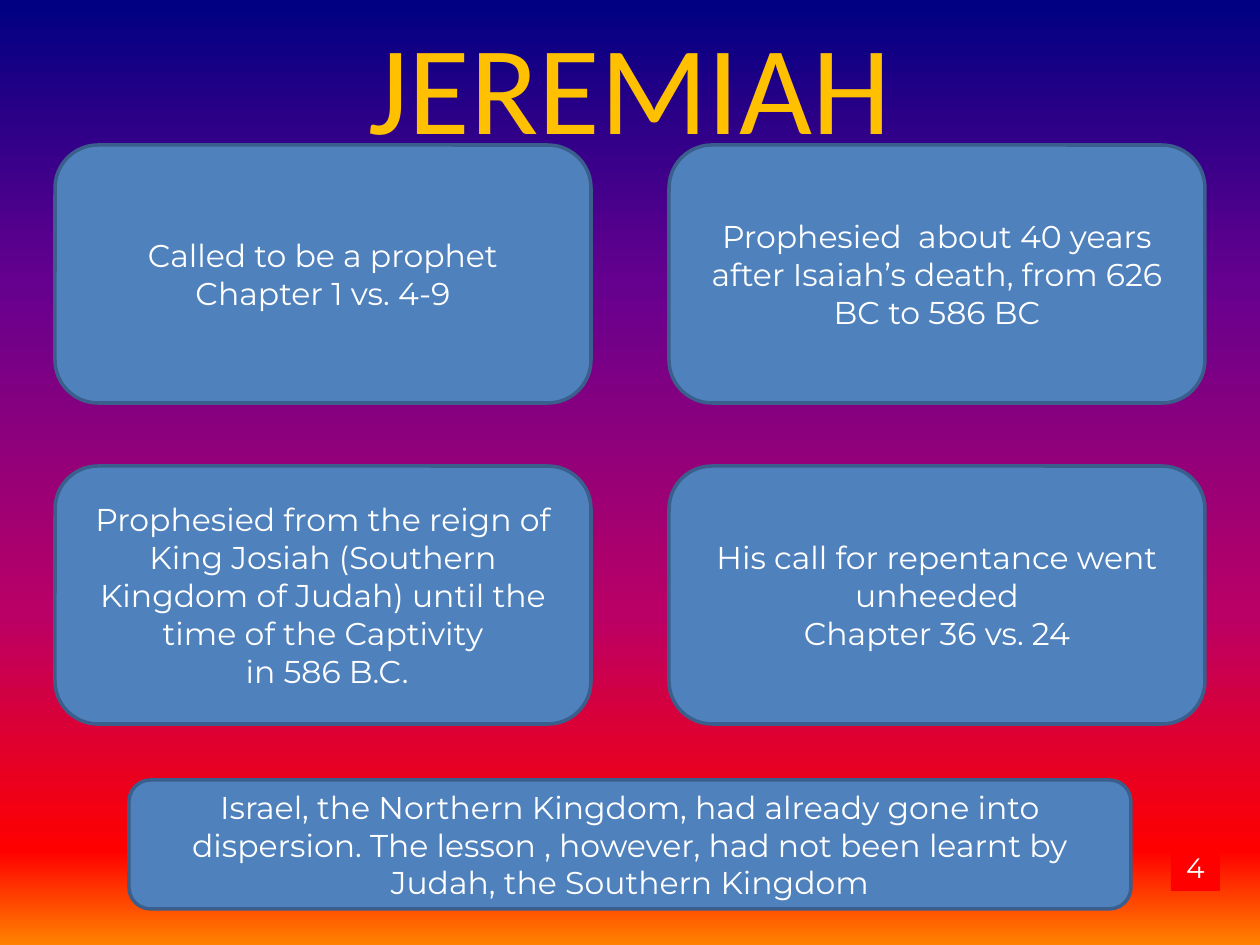
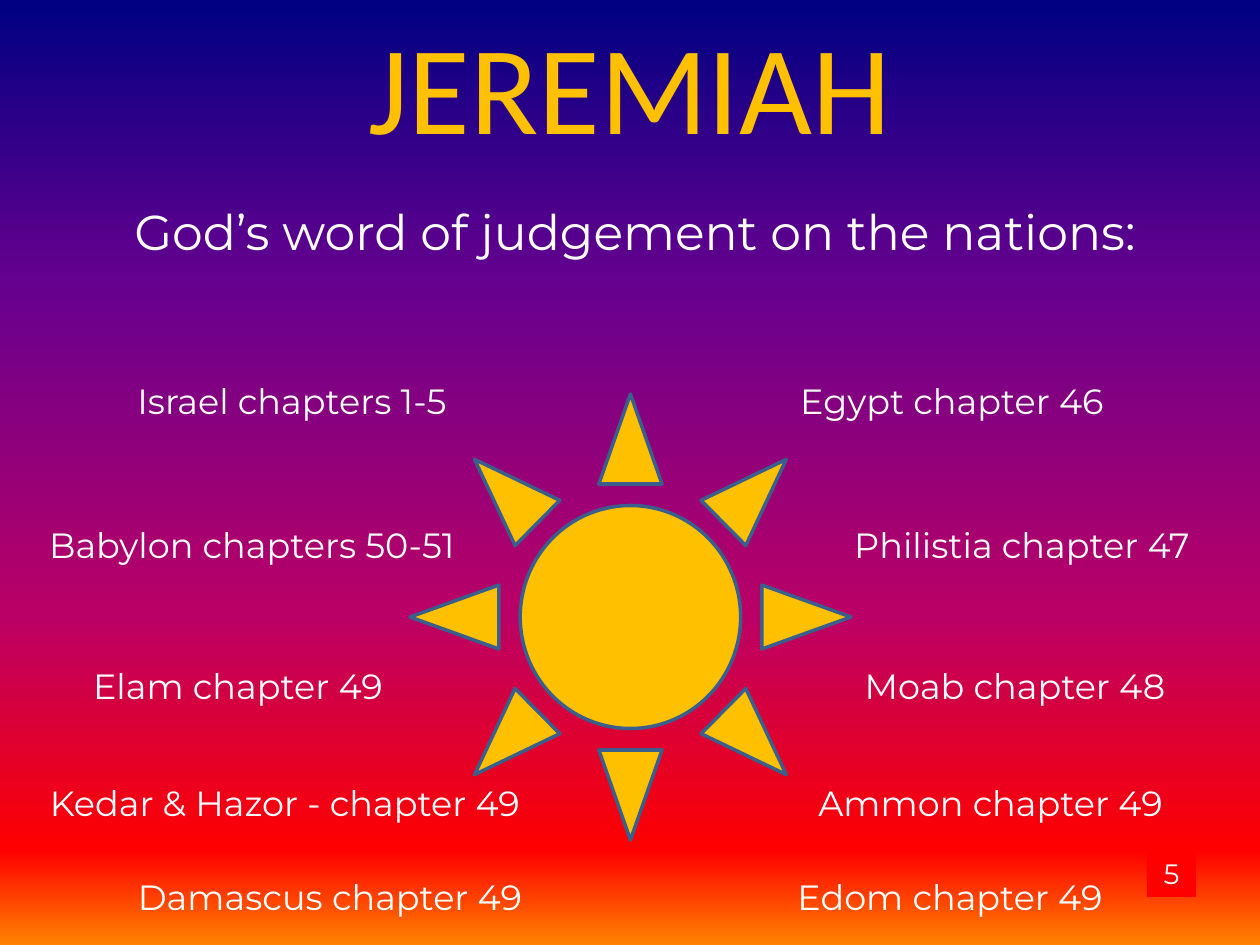
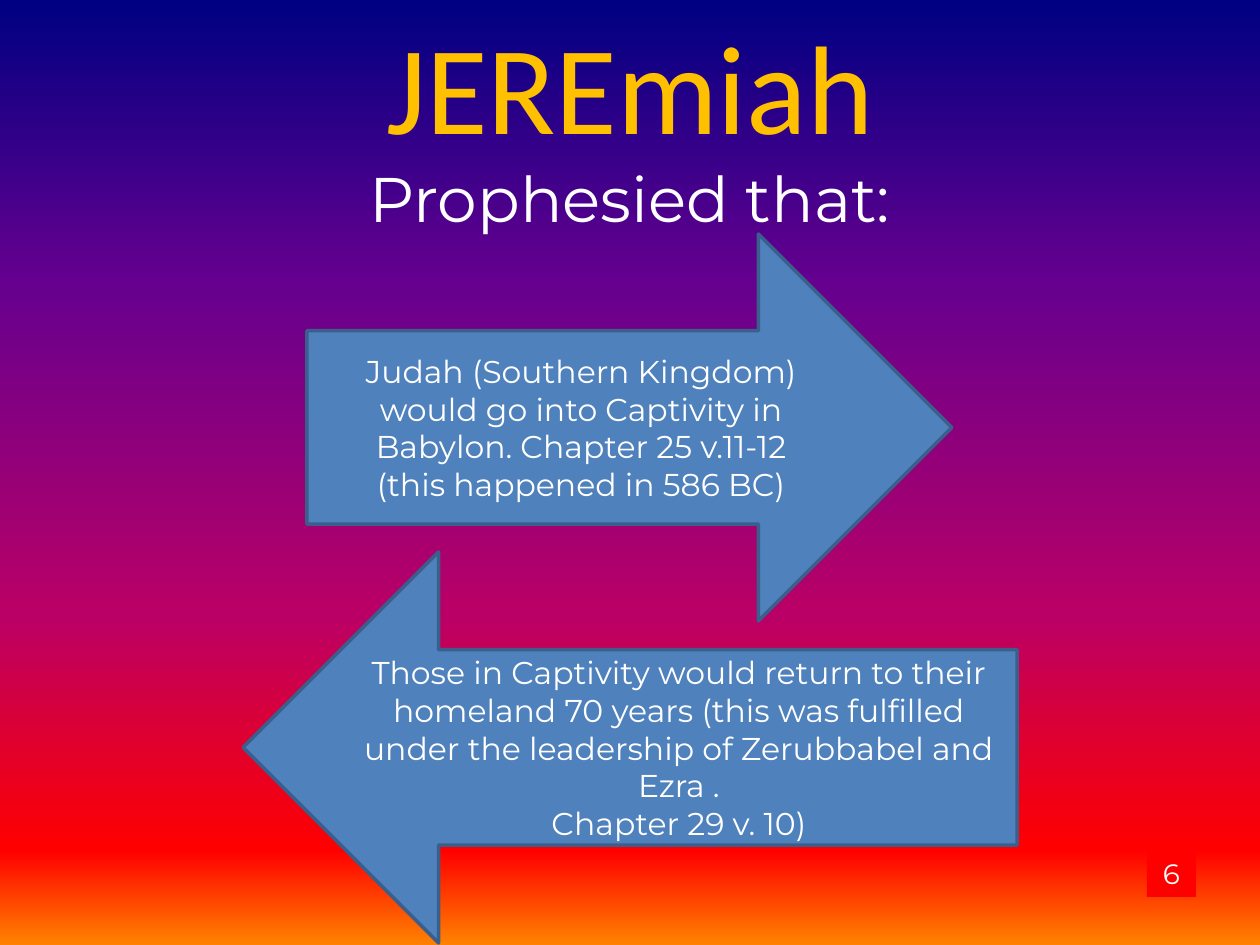
"""Build three slides about the prophet Jeremiah."""
from lxml import etree
from pptx import Presentation
from pptx.dml.color import RGBColor
from pptx.enum.shapes import MSO_SHAPE
from pptx.enum.text import MSO_ANCHOR, MSO_AUTO_SIZE, PP_ALIGN
from pptx.oxml.ns import qn
from pptx.util import Pt

EMU_PER_PX = 914400 / 126
SLIDE_WIDTH, SLIDE_HEIGHT = 1260, 945
TITLE_ONLY = 5

GOLD = RGBColor(0xFF, 0xC0, 0x00)
WHITE = RGBColor(0xFF, 0xFF, 0xFF)
BLUE = RGBColor(0x4F, 0x81, 0xBD)
OUTLINE = RGBColor(0x3A, 0x5F, 0x8C)
RED = RGBColor(0xFF, 0x00, 0x00)
SUNSET = [
    (0, RGBColor(0x00, 0x00, 0x82)),
    (30, RGBColor(0x66, 0x00, 0x8F)),
    (65, RGBColor(0xBA, 0x00, 0x66)),
    (90, RED),
    (100, RGBColor(0xFF, 0x82, 0x00)),
]

HEADING_FONT, BODY_FONT = "Calibri", "Montserrat"
CENTER, LEFT = PP_ALIGN.CENTER, PP_ALIGN.LEFT
TOP, MIDDLE = MSO_ANCHOR.TOP, MSO_ANCHOR.MIDDLE
NO_AUTOFIT = MSO_AUTO_SIZE.NONE
ROUNDED, RECTANGLE, SUN = MSO_SHAPE.ROUNDED_RECTANGLE, MSO_SHAPE.RECTANGLE, MSO_SHAPE.SUN
RIGHT_ARROW, LEFT_ARROW = MSO_SHAPE.RIGHT_ARROW, MSO_SHAPE.LEFT_ARROW

CARD_COLUMNS, CARD_ROWS = (55, 669), (145, 466)
CARD_WIDTH, CARD_HEIGHT = 536, 258
CARDS = [
    ["Called to be a prophet", "Chapter 1 vs. 4-9"],
    ["Prophesied  about 40 years after Isaiah’s death, from 626 BC to 586 BC"],
    ["Prophesied from the reign of King Josiah (Southern Kingdom of Judah) "
     "until the time of the Captivity", " in 586 B.C."],
    ["His call for repentance went unheeded", "Chapter 36 vs. 24"],
]
LESSON = ["Israel, the Northern Kingdom, had already gone into dispersion. The lesson , "
          "however, had not been learnt by Judah, the Southern Kingdom"]

LABEL_HEIGHT = 55
NATIONS = [
    ("Israel chapters 1-5", 54, 373, 476, CENTER),
    ("Egypt chapter 46", 714, 373, 476, CENTER),
    ("Babylon chapters 50-51", 3, 517, 498, CENTER),
    ("Philistia chapter 47", 784, 517, 476, CENTER),
    ("Elam chapter 49", 0, 658, 476, CENTER),
    ("Moab chapter 48", 777, 658, 476, CENTER),
    ("Kedar & Hazor - chapter 49", 1, 775, 568, CENTER),
    ("Ammon chapter 49", 806, 775, 391, LEFT),
    ("Damascus chapter 49", 92, 869, 476, CENTER),
    ("Edom chapter 49", 712, 869, 476, CENTER),
]

CAPTIVITY = ["Judah (Southern Kingdom) would go into Captivity in Babylon. Chapter 25 v.11-12",
             "(this happened in 586 BC)"]
RETURN = ["Those in Captivity would return to their homeland 70 years (this was fulfilled "
          "under the leadership of Zerubbabel and Ezra .", "Chapter 29 v. 10)"]


def px(*lengths):
    """Turn pixel lengths into EMU."""
    return [round(length * EMU_PER_PX) for length in lengths]


def write(frame, lines, size, font=BODY_FONT, color=WHITE, align=CENTER, anchor=TOP):
    """Fill a text frame with one paragraph per line."""
    frame.word_wrap = True
    frame.auto_size = NO_AUTOFIT
    frame.vertical_anchor = anchor
    for index, line in enumerate(lines):
        paragraph = frame.add_paragraph() if index else frame.paragraphs[0]
        add_line(paragraph, line, size, font, color, align)


def add_line(paragraph, line, size, font=BODY_FONT, color=WHITE, align=CENTER):
    """Add one formatted run to a paragraph."""
    paragraph.alignment = align
    run = paragraph.add_run()
    run.text = line
    run.font.size = Pt(size)
    run.font.name = font
    run.font.color.rgb = color


def add_label(slide, line, left, top, width, height, size, align=CENTER):
    """Add a plain line of text."""
    label = slide.shapes.add_textbox(*px(left, top, width, height))
    write(label.text_frame, [line], size, align=align)


def add_figure(slide, preset, left, top, width, height, fill=BLUE, outline=OUTLINE):
    """Add a filled preset shape, outlined if a colour is given."""
    figure = slide.shapes.add_shape(preset, *px(left, top, width, height))
    figure.shadow.inherit = False
    figure.fill.solid()
    figure.fill.fore_color.rgb = fill
    if outline is None:
        figure.line.fill.background()
    else:
        figure.line.color.rgb = outline
        figure.line.width = Pt(2)
    return figure


def add_panel(slide, preset, left, top, width, height, lines):
    """Add a blue shape that holds centred text."""
    panel = add_figure(slide, preset, left, top, width, height)
    write(panel.text_frame, lines, 18, anchor=MIDDLE)


def add_page_number(slide, number, left=1147, top=850):
    """Add the red page number box."""
    badge = add_figure(slide, RECTANGLE, left, top, 49, 47, RED, None)
    write(badge.text_frame, [number], 16)


def add_titled_slide(prs, heading, height=165):
    """Add a slide with the large gold heading."""
    slide = prs.slides.add_slide(prs.slide_layouts[TITLE_ONLY])
    title = slide.shapes.title
    title.left, title.top, title.width, title.height = px(0, 2, SLIDE_WIDTH, height)
    write(title.text_frame, [heading], 72, HEADING_FONT, GOLD)
    return slide


def paint_background(master):
    """Give all slides the sunset gradient, running downwards."""
    fill = master.background.fill
    fill.gradient()
    fill.gradient_angle = 270
    stops = master.element.find(".//" + qn("a:gsLst"))
    for stop in list(stops):
        stops.remove(stop)
    for percent, color in SUNSET:
        stop = etree.SubElement(stops, qn("a:gs"), pos=str(percent * 1000))
        etree.SubElement(stop, qn("a:srgbClr"), val=str(color))


def build_calling(prs):
    """Show the prophet's calling in a grid of cards."""
    slide = add_titled_slide(prs, "JEREMIAH")
    for index, lines in enumerate(CARDS):
        row, column = divmod(index, len(CARD_COLUMNS))
        add_panel(slide, ROUNDED, CARD_COLUMNS[column], CARD_ROWS[row],
                  CARD_WIDTH, CARD_HEIGHT, lines)
    add_panel(slide, ROUNDED, 129, 780, 1002, 129, LESSON)
    add_page_number(slide, "4", 1171, 844)


def build_judgement(prs):
    """Show the judged nations around a sun."""
    slide = add_titled_slide(prs, "JEREMIAH")
    add_label(slide, "God’s word of judgement on the nations:", 5, 195, SLIDE_WIDTH, 72, 28)
    for nation, left, top, width, align in NATIONS:
        add_label(slide, nation, left, top, width, LABEL_HEIGHT, 20, align)
    add_figure(slide, SUN, 410, 394, 441, 446, GOLD)
    add_page_number(slide, "5")


def build_prophecies(prs):
    """Show captivity and return as opposing arrows."""
    slide = add_titled_slide(prs, "JEREmiah", 251)
    add_line(slide.shapes.title.text_frame.add_paragraph(), "Prophesied that:", 36)
    add_panel(slide, RIGHT_ARROW, 307, 234, 645, 387, CAPTIVITY)
    add_panel(slide, LEFT_ARROW, 243, 552, 774, 391, RETURN)
    add_page_number(slide, "6")


def main():
    """Build and save the presentation."""
    prs = Presentation()
    prs.slide_width, prs.slide_height = px(SLIDE_WIDTH, SLIDE_HEIGHT)
    paint_background(prs.slide_master)
    build_calling(prs)
    build_judgement(prs)
    build_prophecies(prs)
    prs.save("out.pptx")


if __name__ == "__main__":
    main()
